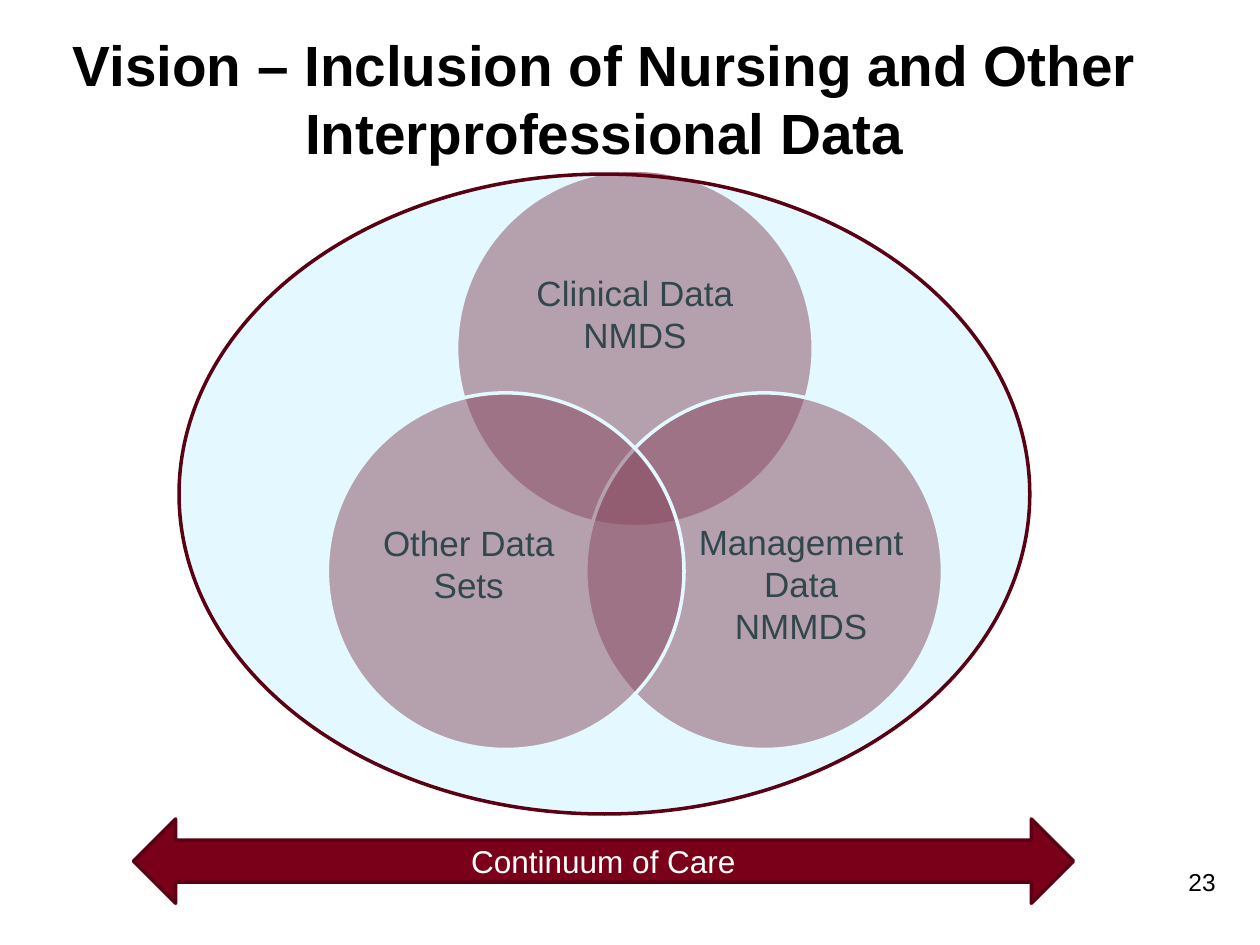
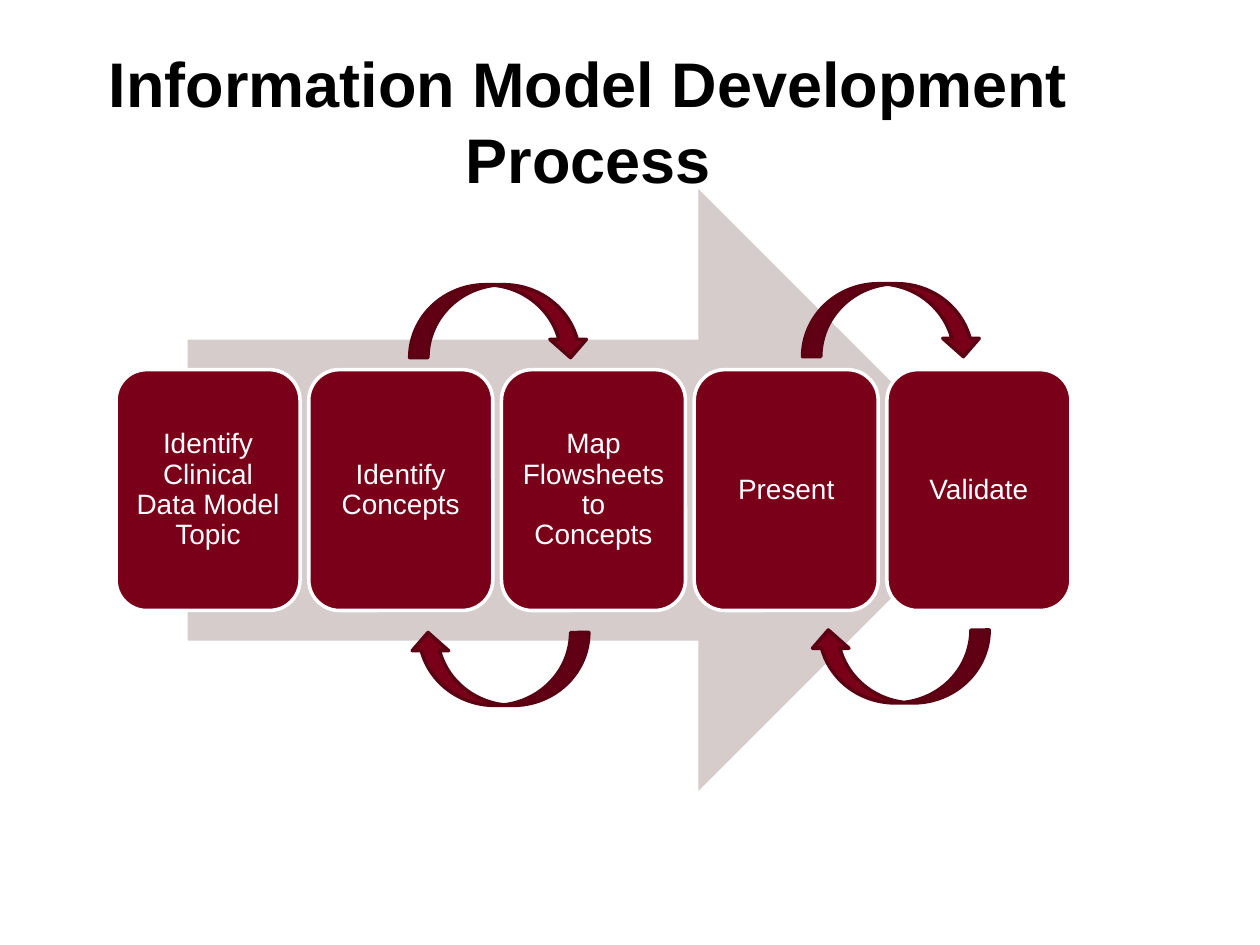
from lxml import etree
from pptx import Presentation
from pptx.dml.color import RGBColor
from pptx.enum.shapes import MSO_SHAPE
from pptx.enum.text import MSO_ANCHOR, MSO_AUTO_SIZE, PP_ALIGN
from pptx.oxml.ns import qn
from pptx.util import Cm, Pt

OVAL = MSO_SHAPE.OVAL
CARD = MSO_SHAPE.ROUNDED_RECTANGLE
RIGHT_ARROW = MSO_SHAPE.RIGHT_ARROW
DOUBLE_ARROW = MSO_SHAPE.LEFT_RIGHT_ARROW
LOOP_ARROW = MSO_SHAPE.CURVED_DOWN_ARROW
CENTER, RIGHT = PP_ALIGN.CENTER, PP_ALIGN.RIGHT
MIDDLE, TOP = MSO_ANCHOR.MIDDLE, MSO_ANCHOR.TOP
NO_FIT = MSO_AUTO_SIZE.NONE

FONT = "Arial"
MAROON, DARK_MAROON = "7A0019", "5A0012"
SKY, PALE_GREY = "A8EEFF", "D7CCCC"
BLACK, WHITE = "000000", "FFFFFF"
TITLE_ONLY = 5
LINE_WIDTH = 2


def color(value):
    """Turn a hex string into a colour."""
    return RGBColor.from_string(value)


def write(shape, lines, size, ink, bold=False, align=CENTER, anchor=MIDDLE,
          spacing=None, inset=None, bottom=None):
    """Put lines of text into a shape and format them."""
    frame = shape.text_frame
    frame.text = "\n".join(lines)
    frame.word_wrap = True
    frame.auto_size = NO_FIT
    frame.vertical_anchor = anchor
    if inset is not None:
        frame.margin_left = frame.margin_right = Cm(inset)
        frame.margin_top = frame.margin_bottom = Cm(inset)
    if bottom is not None:
        frame.margin_bottom = Cm(bottom)
    for para in frame.paragraphs:
        para.alignment = align
        para.line_spacing = spacing
        for span in para.runs:
            span.font.name = FONT
            span.font.size = Pt(size)
            span.font.bold = bold
            span.font.color.rgb = color(ink)


def add_text(page, box, lines, size, ink, **style):
    """Add a text box."""
    shape = page.shapes.add_textbox(*map(Cm, box))
    write(shape, lines, size, ink, **style)


def add_figure(page, kind, box, fill, line=None, opacity=100):
    """Add a flat preset shape, optionally outlined or see-through."""
    shape = page.shapes.add_shape(kind, *map(Cm, box))
    shape.shadow.inherit = False
    shape.fill.solid()
    shape.fill.fore_color.rgb = color(fill)
    if opacity < 100:
        tint = shape.fill._xPr.find(f"{qn('a:solidFill')}/{qn('a:srgbClr')}")
        etree.SubElement(tint, qn("a:alpha")).set("val", str(opacity * 1000))
    if line:
        shape.line.color.rgb = color(line)
        shape.line.width = Pt(LINE_WIDTH)
    else:
        shape.line.fill.background()
    return shape


def add_page(deck, title, box, size):
    """Add a title-only slide with its formatted title."""
    page = deck.slides.add_slide(deck.slide_layouts[TITLE_ONLY])
    heading = page.shapes.title
    heading.left, heading.top, heading.width, heading.height = map(Cm, box)
    write(heading, [title], size, BLACK, bold=True)
    return page


def add_venn(page, box):
    """Draw three overlapping data circles inside a box."""
    left, top, width, height = box
    size = 7.19
    low, far = height - size, width - size
    circles = [
        (far / 2, 0, (0.95, 1.27, 5.29, 3.23), ["Clinical Data", "NMDS"], 0),
        (far, low, (2.18, 1.86, 4.32, 3.96), ["Management Data", "NMMDS"], 0),
        (0, low, (0.69, 1.86, 4.32, 3.96), ["Other Data Sets"], 0.81),
    ]
    for across, down, (inner_x, inner_y, *extent), lines, bottom in circles:
        x, y = left + across, top + down
        add_figure(page, OVAL, (x, y, size, size), MAROON, WHITE, 50)
        add_text(page, (x + inner_x, y + inner_y, *extent), lines, 20, BLACK,
                 inset=0, bottom=bottom)


def add_process(page, box, steps):
    """Draw a wide arrow with a row of step cards across it."""
    left, top, width, height = box
    add_figure(page, RIGHT_ARROW,
               (left + 0.075 * width, top, 0.85 * width, height), PALE_GREY)
    card_width = 3.71
    pitch = (width - card_width) / (len(steps) - 1)
    for index, step in enumerate(steps):
        card = add_figure(page, CARD,
                          (left + index * pitch, top + 0.3 * height,
                           card_width, 0.4 * height), MAROON, WHITE)
        write(card, [step], 16, WHITE, spacing=0.9, inset=0.18)


def add_loops(page, corners, rotation):
    """Draw curved arrows at the given corners."""
    for corner in corners:
        loop = add_figure(page, LOOP_ARROW, (*corner, 3.61, 1.47),
                          MAROON, DARK_MAROON)
        loop.rotation = rotation


def build_vision(deck):
    """Build the slide on combining data sets."""
    page = add_page(
        deck, "Vision – Inclusion of Nursing and Other Interprofessional Data",
        (0.97, 0.38, 22.43, 3.18), 32.4)
    add_text(page, (19.48, 17.35, 5.28, 1.27), ["23"], 14, BLACK,
             align=RIGHT, anchor=TOP)
    add_venn(page, (6.6, 3.43, 12.4, 11.68))
    add_figure(page, OVAL, (3.61, 3.51, 17.15, 12.9), SKY, DARK_MAROON, 30)
    care = add_figure(page, DOUBLE_ARROW, (2.69, 16.51, 18.95, 1.7),
                      MAROON, DARK_MAROON)
    write(care, ["Continuum of Care"], 18, WHITE)


def build_process(deck):
    """Build the slide on the model development steps."""
    page = add_page(deck, "Information Model Development Process",
                    (0.43, 0.84, 22.86, 3.18), 36)
    add_process(page, (2.34, 3.81, 19.25, 12.14),
                ["Identify Clinical Data Model Topic", "Identify Concepts",
                 "Map Flowsheets to Concepts", "Present", "Validate"])
    add_loops(page, [(16.18, 5.72), (8.26, 5.74)], 0)
    add_loops(page, [(16.33, 12.7), (8.26, 12.75)], 180)


def main():
    """Build and save the deck."""
    deck = Presentation()
    deck.slide_width, deck.slide_height = Cm(25.4), Cm(19.05)
    build_vision(deck)
    build_process(deck)
    deck.save("out.pptx")


if __name__ == "__main__":
    main()
